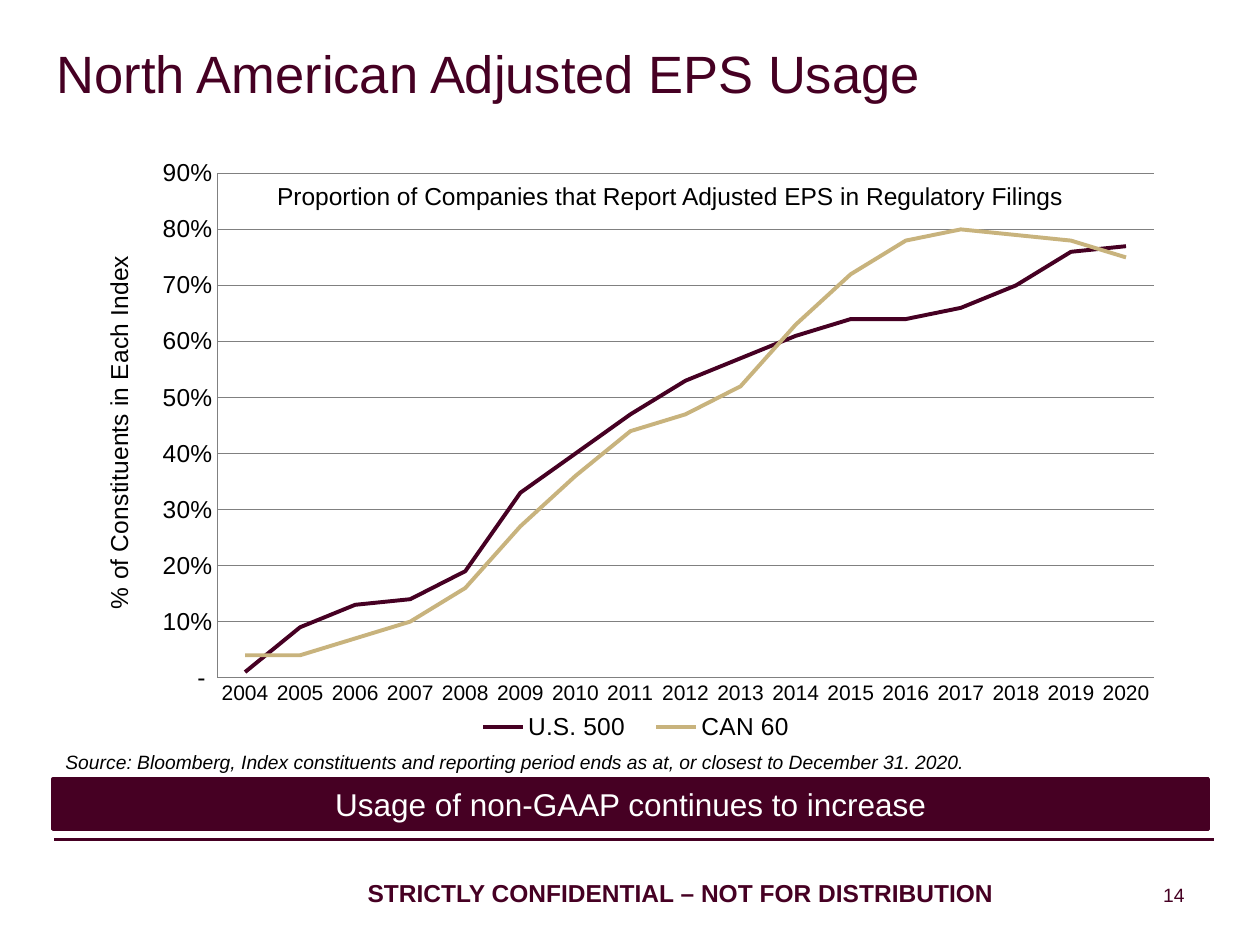
from collections import namedtuple

from lxml import etree
from pptx import Presentation
from pptx import util as u
from pptx.chart import data as chart_data
from pptx.dml.color import RGBColor
from pptx.enum import chart as c
from pptx.enum import shapes, text
from pptx.oxml import parse_xml
from pptx.oxml.ns import nsdecls, qn

BURGUNDY = RGBColor(0x46, 0x00, 0x23)
GOLD = RGBColor(0xC8, 0xB3, 0x7D)
GREY = RGBColor(0x80, 0x80, 0x80)
BLACK = RGBColor(0, 0, 0)
WHITE = RGBColor(255, 255, 255)
FONT = "Arial"
LEFT, CENTER, RIGHT = text.PP_ALIGN.LEFT, text.PP_ALIGN.CENTER, text.PP_ALIGN.RIGHT
TOP, MIDDLE = text.MSO_ANCHOR.TOP, text.MSO_ANCHOR.MIDDLE

Box = namedtuple("Box", "left top width height")

YEARS = [str(year) for year in range(2004, 2021)]
USAGE = {
    "U.S. 500": (BURGUNDY, [0.01, 0.09, 0.13, 0.14, 0.19, 0.33, 0.4, 0.47, 0.53,
                            0.57, 0.61, 0.64, 0.64, 0.66, 0.7, 0.76, 0.77]),
    "CAN 60": (GOLD, [0.04, 0.04, 0.07, 0.1, 0.16, 0.27, 0.36, 0.44, 0.47,
                      0.52, 0.63, 0.72, 0.78, 0.8, 0.79, 0.78, 0.75]),
}


def inside(box, left, top, width, height):
    return Box(box.left + left, box.top + top, width, height)


def lengths(box):
    return [u.Cm(value) for value in box]


def style_font(font, size, color=BLACK, bold=False, italic=False):
    font.name, font.size = FONT, u.Pt(size)
    font.bold, font.italic = bold, italic
    font.color.rgb = color


def write(shape, words, size=14, color=BLACK, bold=False, italic=False,
          align=LEFT, anchor=TOP):
    frame = shape.text_frame
    frame.word_wrap = True
    frame.auto_size = text.MSO_AUTO_SIZE.NONE
    frame.vertical_anchor = anchor
    paragraph = frame.paragraphs[0]
    paragraph.text = words
    paragraph.alignment = align
    style_font(paragraph.runs[0].font, size, color, bold, italic)


def add_text(slide, box, words, **formatting):
    write(slide.shapes.add_textbox(*lengths(box)), words, **formatting)


def add_title(slide, box):
    title = slide.shapes.title
    title.left, title.top, title.width, title.height = lengths(box)
    write(title, "North American Adjusted EPS Usage", size=30, color=BURGUNDY,
          anchor=MIDDLE)


def set_layout(element, position, box, target=None):
    for old in element.findall(qn("c:layout")):
        element.remove(old)
    parts = [("layoutTarget", target)] if target else []
    parts += [("xMode", "edge"), ("yMode", "edge"), *zip("xywh", box)]
    values = "".join(f'<c:{name} val="{value}"/>' for name, value in parts)
    element.insert(position, parse_xml(
        f'<c:layout {nsdecls("c")}><c:manualLayout>{values}</c:manualLayout></c:layout>'))


def style_axis(axis, size):
    axis.major_tick_mark = axis.minor_tick_mark = c.XL_TICK_MARK.NONE
    axis.format.line.color.rgb = GREY
    axis.format.line.width = u.Pt(0.75)
    style_font(axis.tick_labels.font, size)


def add_usage_chart(slide, box):
    data = chart_data.CategoryChartData(number_format="0%")
    data.categories = YEARS
    for name, (color, values) in USAGE.items():
        data.add_series(name, values)
    chart = slide.shapes.add_chart(c.XL_CHART_TYPE.LINE, *lengths(box), data).chart
    chart.has_title = False
    style_font(chart.font, 14)

    chart.has_legend = True
    chart.legend.position = c.XL_LEGEND_POSITION.BOTTOM
    chart.legend.include_in_layout = False
    style_font(chart.legend.font, 14)

    chart_element = chart._chartSpace.chart
    set_layout(chart_element.plotArea, 0, Box(0.13, 0.04, 0.85, 0.82), "inner")
    set_layout(chart_element.find(qn("c:legend")), 1, Box(0.35, 0.91, 0.32, 0.06))

    style_axis(chart.category_axis, 12)
    axis = chart.value_axis
    style_axis(axis, 14)
    axis.minimum_scale, axis.maximum_scale, axis.major_unit = 0, 0.9, 0.1
    axis.tick_labels.number_format = '0%;;"- "'
    axis.tick_labels.number_format_is_linked = False
    axis.has_major_gridlines = True
    axis.major_gridlines.format.line.color.rgb = GREY
    axis.major_gridlines.format.line.width = u.Pt(0.75)
    axis.has_title = True
    paragraph = axis.axis_title.text_frame.paragraphs[0]
    paragraph.text = "% of Constituents in Each Index"
    style_font(paragraph.runs[0].font, 14)

    chart.plots[0].vary_by_categories = False
    for series in chart.plots[0].series:
        series.smooth = False
        series.marker.style = c.XL_MARKER_STYLE.NONE
        series.format.line.color.rgb = USAGE[series.name][0]
        series.format.line.width = u.Pt(2.25)


def add_chart_region(slide, box):
    add_usage_chart(slide, inside(box, 0.43, 0, 22.2, 12.4))
    add_text(slide, inside(box, 2.64, 0.53, 19.61, 0.86),
             "Proportion of Companies that Report Adjusted EPS in Regulatory Filings",
             align=CENTER)
    add_text(slide, inside(box, 0, 12.01, 19, 0.74),
             "Source: Bloomberg, Index constituents and reporting period ends as at, "
             "or closest to December 31. 2020.", size=11, italic=True)


def add_takeaway(slide, box):
    banner = slide.shapes.add_shape(shapes.MSO_SHAPE.RECTANGLE, *lengths(box))
    banner.shadow.inherit = False
    banner.fill.solid()
    banner.fill.fore_color.rgb = BURGUNDY
    banner.line.color.rgb = BURGUNDY
    banner.line.width = u.Pt(2)
    write(banner, "Usage of non-GAAP continues to increase", size=18, color=WHITE,
          align=CENTER, anchor=MIDDLE)


def add_footer(slide, box):
    right = box.left + box.width
    rule = slide.shapes.add_connector(
        shapes.MSO_CONNECTOR.STRAIGHT,
        *lengths((box.left, box.top, right, box.top)))
    rule.line.color.rgb = BURGUNDY
    rule.line.width = u.Pt(2)
    etree.SubElement(rule._element.spPr, qn("a:effectLst"))
    add_text(slide, inside(box, 6.07, 0.66, 13.36, 1.02),
             "STRICTLY CONFIDENTIAL – NOT FOR DISTRIBUTION", color=BURGUNDY, bold=True)
    add_text(slide, inside(box, 17.12, 0.61, 5.92, 1.02), "14", size=11,
             color=BURGUNDY, align=RIGHT, anchor=MIDDLE)


def main():
    presentation = Presentation()
    presentation.slide_width, presentation.slide_height = u.Cm(25.4), u.Cm(19.05)
    slide = presentation.slides.add_slide(presentation.slide_layouts[5])
    add_title(slide, Box(0.89, -0.03, 20.6, 3))
    add_chart_region(slide, Box(1.07, 3, 23.29, 12.75))
    add_takeaway(slide, Box(1.07, 15.7, 23.29, 1.02))
    add_footer(slide, Box(1.09, 16.92, 23.39, 1.68))
    presentation.save("out.pptx")


if __name__ == "__main__":
    main()
